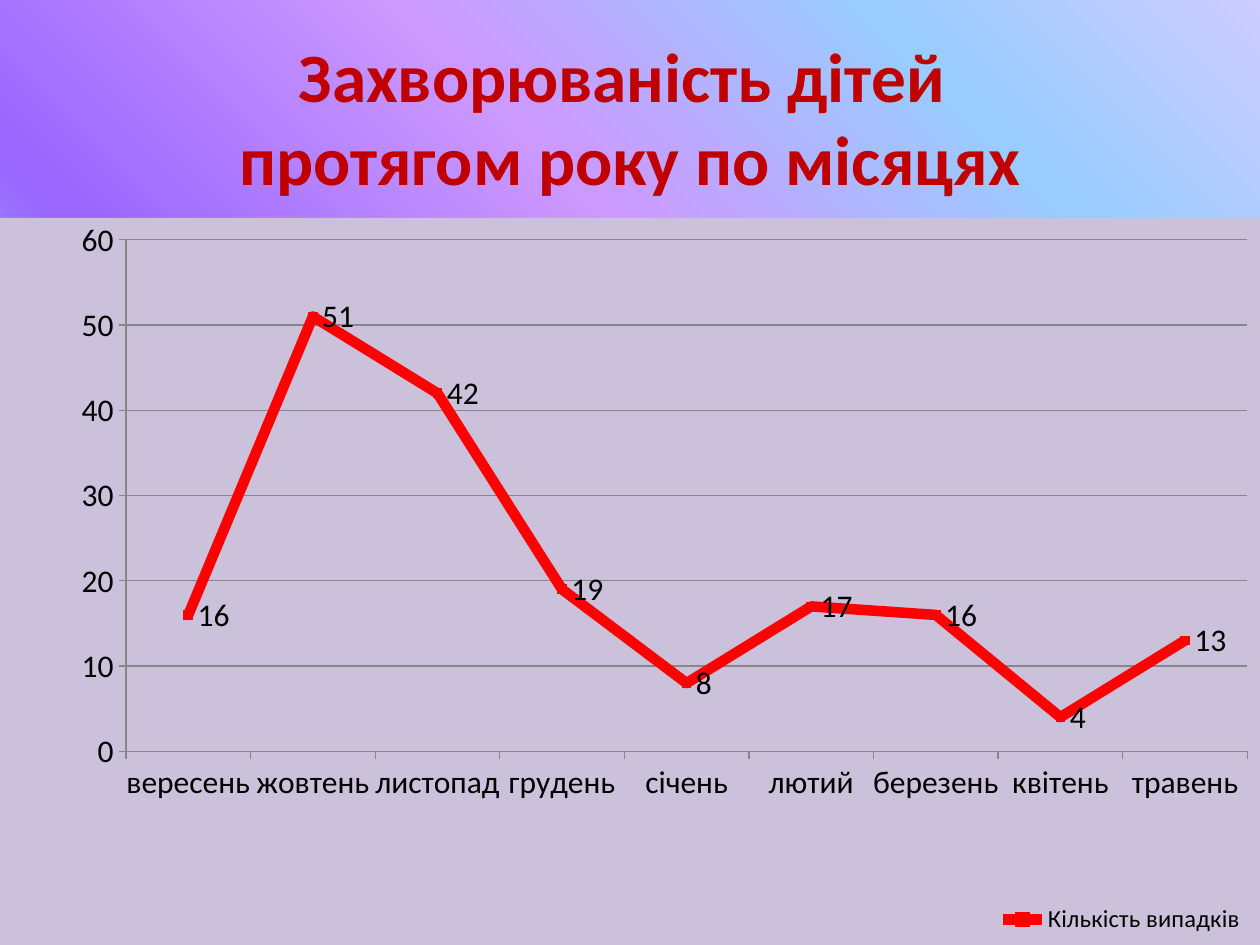
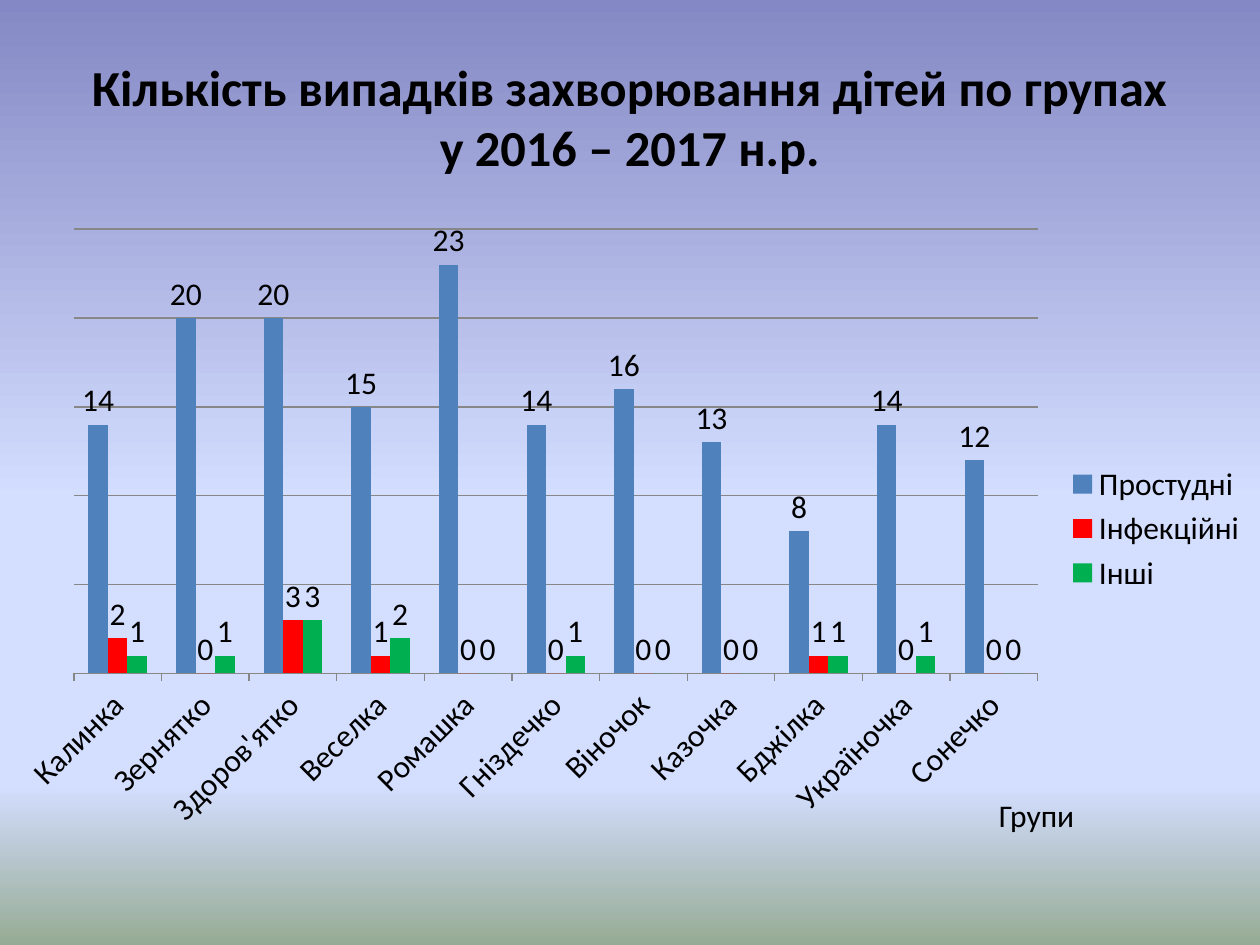
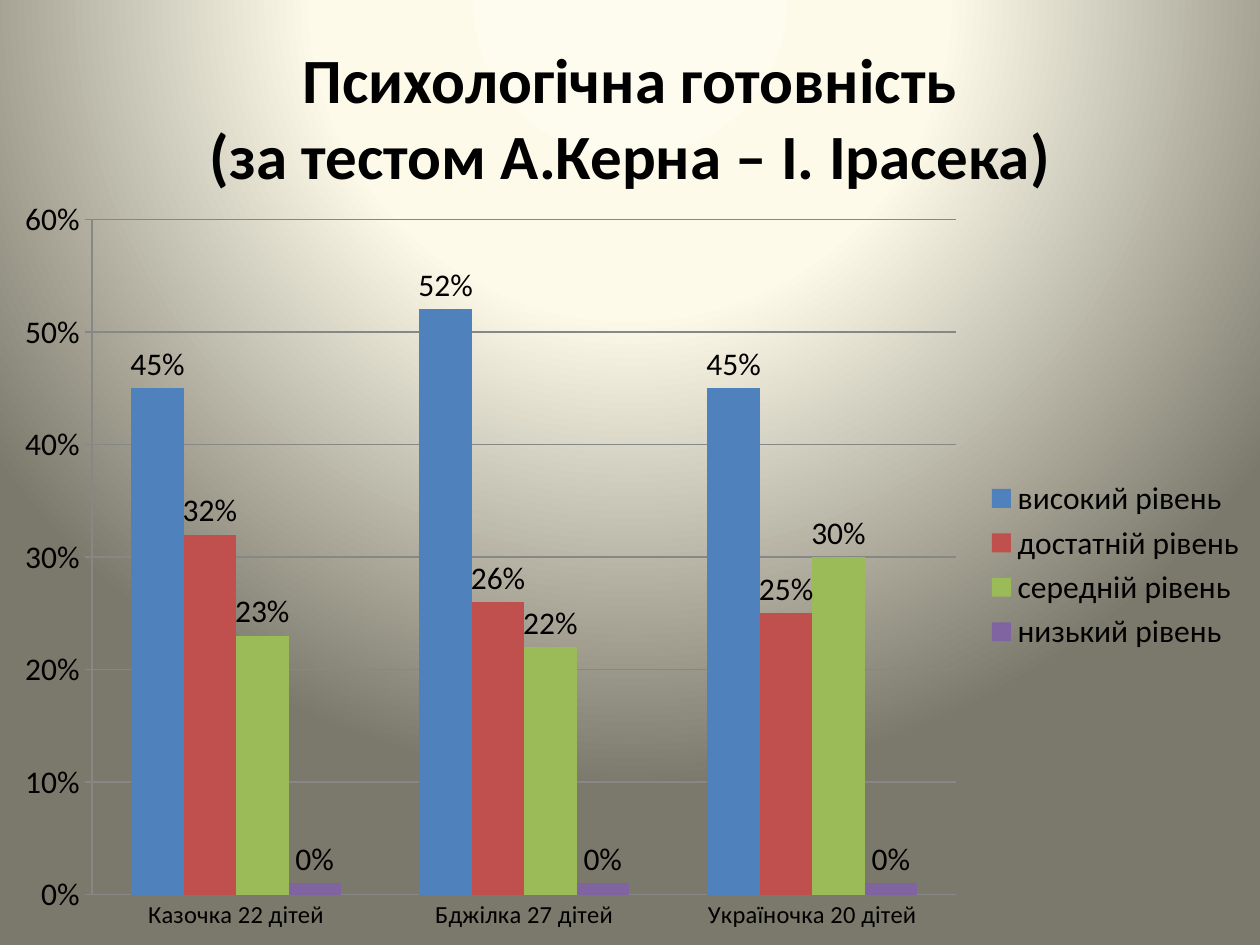
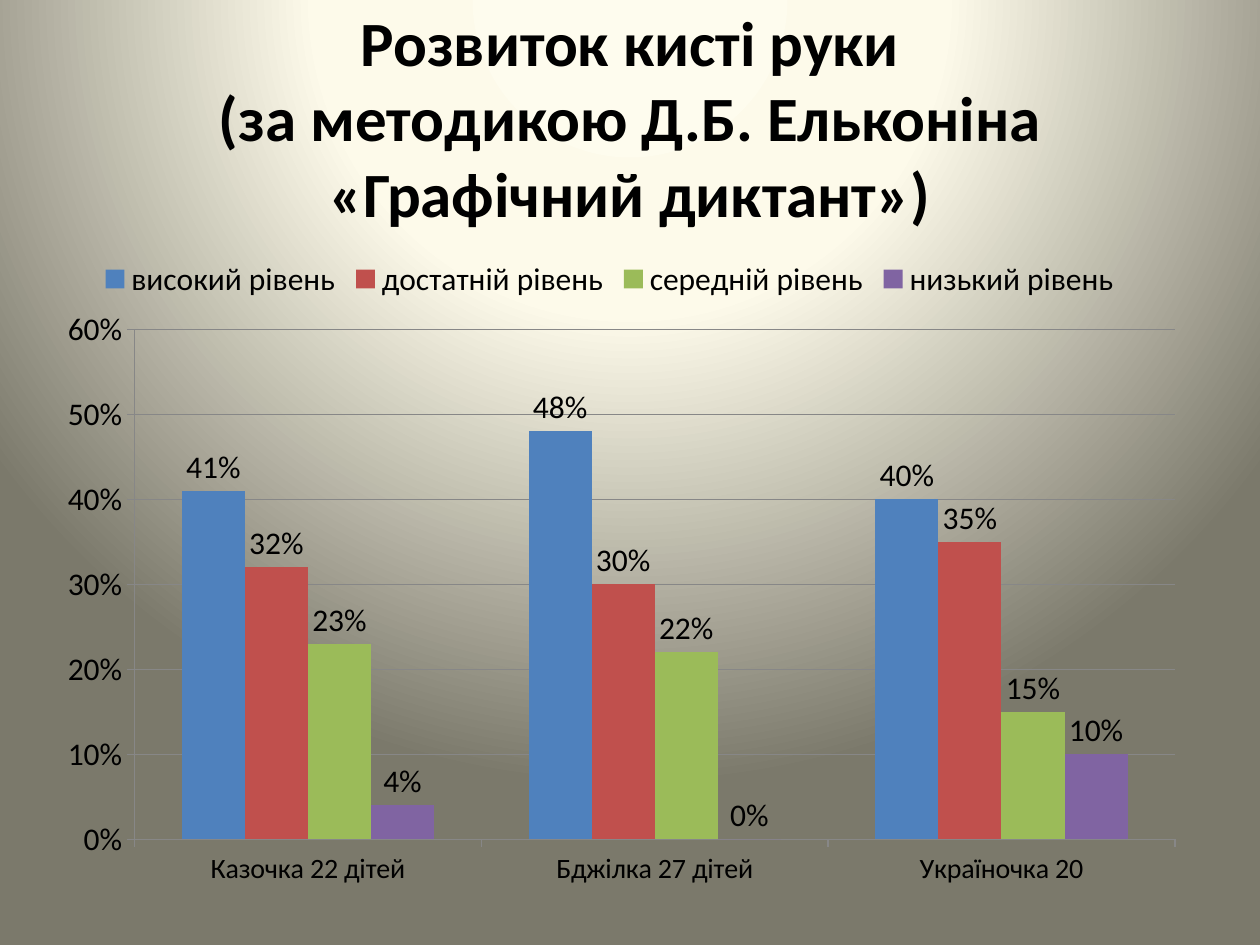
from pptx import Presentation
from pptx.chart.data import CategoryChartData as ChartData
from pptx.dml.color import RGBColor as RGB
from pptx.enum.chart import XL_CHART_TYPE as Kind
from pptx.enum.chart import XL_LABEL_POSITION as Spot
from pptx.enum.chart import XL_LEGEND_POSITION as Side
from pptx.enum.chart import XL_TICK_MARK as Tick
from pptx.enum.text import MSO_ANCHOR as Anchor
from pptx.enum.text import MSO_AUTO_SIZE as Auto
from pptx.enum.text import PP_ALIGN as Align
from pptx.oxml import parse_xml
from pptx.oxml.ns import nsdecls, qn
from pptx.util import Inches, Pt

FONT = "Calibri"
COLORS = {
    "black": "000000", "title": "C00000", "grid": "878787", "panel": "CCC1DA",
    "red": "FF0000", "green": "00B050", "blue": "4F81BD",
    "brick": "C0504D", "olive": "9BBB59", "violet": "8064A2",
}

# Gradients: stops as (percent, colour), then the direction
RAINBOW = ([(0, "CCCCFF"), (18, "99CCFF"), (36, "9966FF"), (61, "CC99FF"),
            (82, "99CCFF"), (100, "CCCCFF")], '<a:lin ang="18900000" scaled="0"/>')
SKY = ([(0, "8488C4"), (53, "D4DEFF"), (83, "D4DEFF"), (100, "96AB94")],
       '<a:lin ang="5400000" scaled="0"/>')
GLOW = ([(0, "FEFCEE"), (40, "FDFAEA"), (100, "7B796B")],
        '<a:path path="circle"><a:fillToRect l="50000" t="-80000" '
        'r="50000" b="180000"/></a:path>')

LEVELS = ["високий рівень", "достатній рівень", "середній рівень", "низький рівень"]
HUES = ["blue", "brick", "olive", "violet"]


def color(name):
    return RGB.from_string(COLORS[name])


class Deck:
    def __init__(self):
        self.prs = Presentation()
        self.prs.slide_width, self.prs.slide_height = Inches(10), Inches(7.5)
        self.slide = None

    def style(self, font, size, hue="black", bold=False):
        font.name, font.size, font.bold = FONT, Pt(size), bold
        font.color.rgb = color(hue)

    def page(self, title, size, back, hue="black"):
        """Start a slide with a gradient background and a title."""
        self.slide = self.prs.slides.add_slide(self.prs.slide_layouts[5])
        stops, way = back
        marks = "".join(f'<a:gs pos="{pos * 1000}"><a:srgbClr val="{rgb}"/></a:gs>'
                        for pos, rgb in stops)
        self.slide.element.find(qn("p:cSld")).insert(0, parse_xml(
            f'<p:bg {nsdecls("p", "a")}><p:bgPr><a:gradFill rotWithShape="1">'
            f'<a:gsLst>{marks}</a:gsLst>{way}</a:gradFill><a:effectLst/></p:bgPr></p:bg>'))
        head = self.slide.shapes.title
        head.left, head.top = Inches(0.5), Inches(0.3)
        head.width, head.height = Inches(9), Inches(1.25)
        frame = head.text_frame
        frame.text = title
        frame.word_wrap, frame.vertical_anchor = True, Anchor.MIDDLE
        para = frame.paragraphs[0]
        para.alignment = Align.CENTER
        for run in para.runs:
            self.style(run.font, size, hue, True)

    def text(self, words, box, size):
        shape = self.slide.shapes.add_textbox(*map(Inches, box))
        frame = shape.text_frame
        frame.text = words
        frame.word_wrap, frame.auto_size = False, Auto.SHAPE_TO_FIT_TEXT
        self.style(frame.paragraphs[0].runs[0].font, size)

    def chart(self, kind, box, cats, rows, top, step, fmt="General",
              side=Side.RIGHT, small=18):
        """Add a chart; rows are (name, values, colour)."""
        data = ChartData(number_format=fmt)
        data.categories = cats
        for name, vals, _ in rows:
            data.add_series(name, vals)
        frame = self.slide.shapes.add_chart(kind, *map(Inches, box), data)
        chart = frame.chart
        chart.has_title = False
        self.style(chart.font, 18)
        chart.has_legend = True
        chart.legend.position = side
        chart.legend.include_in_layout = False
        self.style(chart.legend.font, 18)
        self.axes(chart, top, step, fmt, small)
        plot = chart.plots[0]
        plot.vary_by_categories = False
        for row, (_, _, hue) in zip(plot.series, rows):
            tags = row.data_labels
            tags.show_value = True
            tags.number_format, tags.number_format_is_linked = fmt, False
            self.style(tags.font, 18)
            if kind == Kind.COLUMN_CLUSTERED:
                plot.gap_width = 150
                row.format.fill.solid()
                row.format.fill.fore_color.rgb = color(hue)
                row.invert_if_negative = False
                tags.position = Spot.OUTSIDE_END
            else:
                row.smooth = False
                row.format.line.color.rgb = color(hue)
                row.format.line.width = Pt(6)
                row.marker.size = 5
                tags.position = Spot.RIGHT
        return chart

    def axes(self, chart, top, step, fmt, small):
        cat, val = chart.category_axis, chart.value_axis
        val.minimum_scale, val.maximum_scale, val.major_unit = 0, top, step
        val.has_major_gridlines = True
        val.tick_labels.number_format = fmt
        val.tick_labels.number_format_is_linked = False
        for axis, size in ((cat, small), (val, 18)):
            axis.major_tick_mark, axis.minor_tick_mark = Tick.OUTSIDE, Tick.NONE
            self.style(axis.tick_labels.font, size)
        for line in (cat.format.line, val.format.line, val.major_gridlines.format.line):
            line.color.rgb, line.width = color("grid"), Pt(0.75)

    def place(self, chart, part, box, inner=False):
        """Fix the place of the plot area or legend as shares of the chart."""
        node = next(chart.element.iter(qn(f"c:{part}")))
        for old in node.findall(qn("c:layout")):
            node.remove(old)
        target = '<c:layoutTarget val="inner"/>' if inner else ""
        modes = "".join(f'<c:{key}Mode val="edge"/>' for key in "xy")
        sizes = "".join(f'<c:{key} val="{num}"/>' for key, num in zip("xywh", box))
        node.insert(0 if inner else 1, parse_xml(
            f'<c:layout {nsdecls("c")}><c:manualLayout>{target}{modes}{sizes}'
            '</c:manualLayout></c:layout>'))

    def panel(self, chart, hue):
        chart.element.find(qn("c:txPr")).addprevious(parse_xml(
            f'<c:spPr {nsdecls("c", "a")}><a:solidFill><a:srgbClr val="{COLORS[hue]}"/>'
            '</a:solidFill><a:ln><a:noFill/></a:ln></c:spPr>'))


def main():
    deck = Deck()

    # Cases by month
    deck.page("Захворюваність дітей \vпротягом року по місяцях", 39.6, RAINBOW, "title")
    months = ["вересень", "жовтень", "листопад", "грудень", "січень",
              "лютий", "березень", "квітень", "травень"]
    cases = [("Кількість випадків", [16, 51, 42, 19, 8, 17, 16, 4, 13], "red")]
    chart = deck.chart(Kind.LINE_MARKERS_STACKED, (0, 1.73, 10, 5.8), months, cases, 60, 10)
    chart.legend.font.size = Pt(14)
    deck.panel(chart, "panel")
    deck.place(chart, "plotArea", (0.1, 0.03, 0.89, 0.7), True)
    deck.place(chart, "legend", (0.79, 0.93, 0.2, 0.06))

    # Cases by group
    deck.page("Кількість випадків захворювання дітей по групах\vу 2016 – 2017 н.р.", 28.8, SKY)
    groups = ["Калинка", "Зернятко", "Здоров'ятко", "Веселка", "Ромашка", "Гніздечко",
              "Віночок", "Казочка", "Бджілка", "Україночка", "Сонечко"]
    cases = [("Простудні", [14, 20, 20, 15, 23, 14, 16, 13, 8, 14, 12], "blue"),
             ("Інфекційні", [2, 0, 3, 1, 0, 0, 0, 0, 1, 0, 0], "red"),
             ("Інші", [1, 1, 3, 2, 0, 1, 0, 0, 1, 1, 0], "green")]
    chart = deck.chart(Kind.COLUMN_CLUSTERED, (0, 1.72, 10, 4.95), groups, cases, 25, 5)
    chart.value_axis.visible = False
    deck.text("Групи", (7.83, 6.27, 0.87, 0.4), 18)

    # Readiness for school
    deck.page("Психологічна готовність\v(за тестом А.Керна – І. Ірасека)", 36, GLOW)
    kids = ["Казочка 22 дітей", "Бджілка 27 дітей", "Україночка 20 дітей"]
    shares = [[0.45, 0.52, 0.45], [0.32, 0.26, 0.25], [0.23, 0.22, 0.3], [0.01] * 3]
    chart = deck.chart(Kind.COLUMN_CLUSTERED, (0, 1.47, 10, 6.03), kids,
                       list(zip(LEVELS, shares, HUES)), 0.6, 0.1, "0%", small=14)
    chart.category_axis.major_tick_mark = Tick.NONE
    low = chart.plots[0].series[3]
    for num in range(len(kids)):
        tag = low.points[num].data_label
        tag.text_frame.text = "0%"
        deck.style(tag.text_frame.paragraphs[0].runs[0].font, 18)
        tag.position = Spot.OUTSIDE_END

    # Hand skills
    deck.page("Розвиток кисті руки\v(за методикою Д.Б. Ельконіна «Графічний диктант»)", 36, GLOW)
    kids = kids[:2] + ["Україночка 20"]
    shares = [[0.41, 0.48, 0.4], [0.32, 0.3, 0.35], [0.23, 0.22, 0.15], [0.04, 0, 0.1]]
    chart = deck.chart(Kind.COLUMN_CLUSTERED, (0.35, 1.94, 8.98, 5.19), kids,
                       list(zip(LEVELS, shares, HUES)), 0.6, 0.1, "0%", Side.TOP, 16)
    deck.place(chart, "plotArea", (0.08, 0.13, 0.92, 0.78), True)

    deck.prs.save("out.pptx")


if __name__ == "__main__":
    main()
